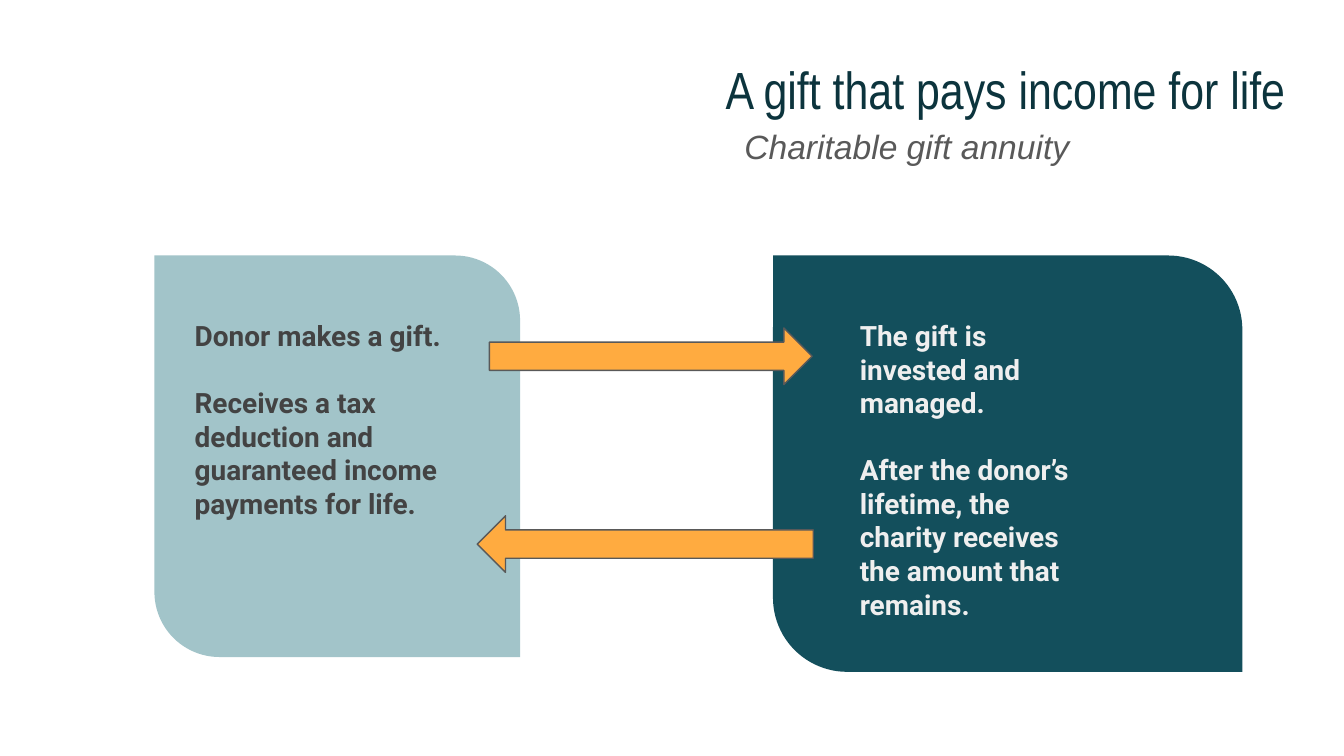
from pptx import Presentation
from pptx.dml.color import RGBColor
from pptx.enum.shapes import MSO_SHAPE
from pptx.enum.text import MSO_ANCHOR, PP_ALIGN
from pptx.util import Cm, Pt

HUES = {
    "title": "0C343D",
    "sub": "595959",
    "pale": "A2C4C9",
    "deep": "134F5C",
    "dark": "434343",
    "light": "EFEFEF",
    "gold": "FFAB40",
}
TOP = 4.83
TEXT_TOP = 5.77


class Deck:
    def __init__(self, width, height):
        self.file = Presentation()
        self.file.slide_width = Cm(width)
        self.file.slide_height = Cm(height)
        self.slide = self.file.slides.add_slide(self.file.slide_layouts[6])

    def hue(self, name):
        return RGBColor.from_string(HUES[name])

    def shape(self, kind, box, fill, *ratios):
        item = self.slide.shapes.add_shape(kind, *map(Cm, box))
        item.shadow.inherit = False
        item.fill.solid()
        item.fill.fore_color.rgb = self.hue(fill)
        item.line.fill.background()
        for i, ratio in enumerate(ratios):
            item.adjustments[i] = ratio
        return item

    def leaf(self, box, fill):
        self.shape(MSO_SHAPE.ROUND_2_DIAG_RECTANGLE, box, fill, 0, 0.178)

    def arrow(self, kind, left, top, width):
        item = self.shape(kind, (left, top, width, 1.07), "gold", 0.5, 0.5)
        item.line.color.rgb = self.hue("sub")
        item.line.width = Pt(0.75)

    def frame(self, box):
        frame = self.slide.shapes.add_textbox(*map(Cm, box)).text_frame
        frame.word_wrap = True
        frame.vertical_anchor = MSO_ANCHOR.TOP
        frame.margin_left = frame.margin_right = Cm(0.25)
        frame.margin_top = frame.margin_bottom = Cm(0.25)
        return frame

    def run(self, para, text, face, size, color, bold=False, italic=False):
        run = para.add_run()
        run.text = text
        font = run.font
        font.name, font.size = face, Pt(size)
        font.bold, font.italic = bold, italic
        font.color.rgb = self.hue(color)

    def title(self, box, head, sub):
        frame = self.frame(box)
        first = frame.paragraphs[0]
        first.alignment = PP_ALIGN.RIGHT
        self.run(first, head, "Arial Narrow", 28, "title")
        second = frame.add_paragraph()
        second.alignment = PP_ALIGN.CENTER
        second.line_spacing = 1.15
        props = second._p.get_or_add_pPr()
        props.set("marL", str(Cm(7.62)))
        props.set("indent", str(Cm(1.27)))
        self.run(second, sub, "Arial", 18, "sub", italic=True)

    def note(self, box, color, *texts):
        frame = self.frame(box)
        for i, text in enumerate(texts):
            para = frame.add_paragraph() if i else frame.paragraphs[0]
            para.space_before = Pt(18 if i else 0)
            self.run(para, text, "Roboto", 15, color, bold=True)


def main():
    deck = Deck(25.4, 14.29)
    deck.title((0.86, 0.84, 23.67, 2.36),
               "A gift that pays income for life", "Charitable gift annuity")
    deck.leaf((2.92, TOP, 6.91, 7.59), "pale")
    deck.note((3.43, TEXT_TOP, 5.38, 5.72), "dark",
              "Donor makes a gift.",
              "Receives a tax deduction and guaranteed income payments for life.")
    deck.leaf((14.61, TOP, 8.87, 7.87), "deep")
    deck.arrow(MSO_SHAPE.RIGHT_ARROW, 9.25, 6.2, 6.1)
    deck.note((16, TEXT_TOP, 4.75, 6.32), "light",
              "The gift is invested and managed.",
              "After the donor’s lifetime, the charity receives the amount that remains.")
    deck.arrow(MSO_SHAPE.LEFT_ARROW, 9.02, 9.75, 6.35)
    deck.file.save("out.pptx")


if __name__ == "__main__":
    main()
